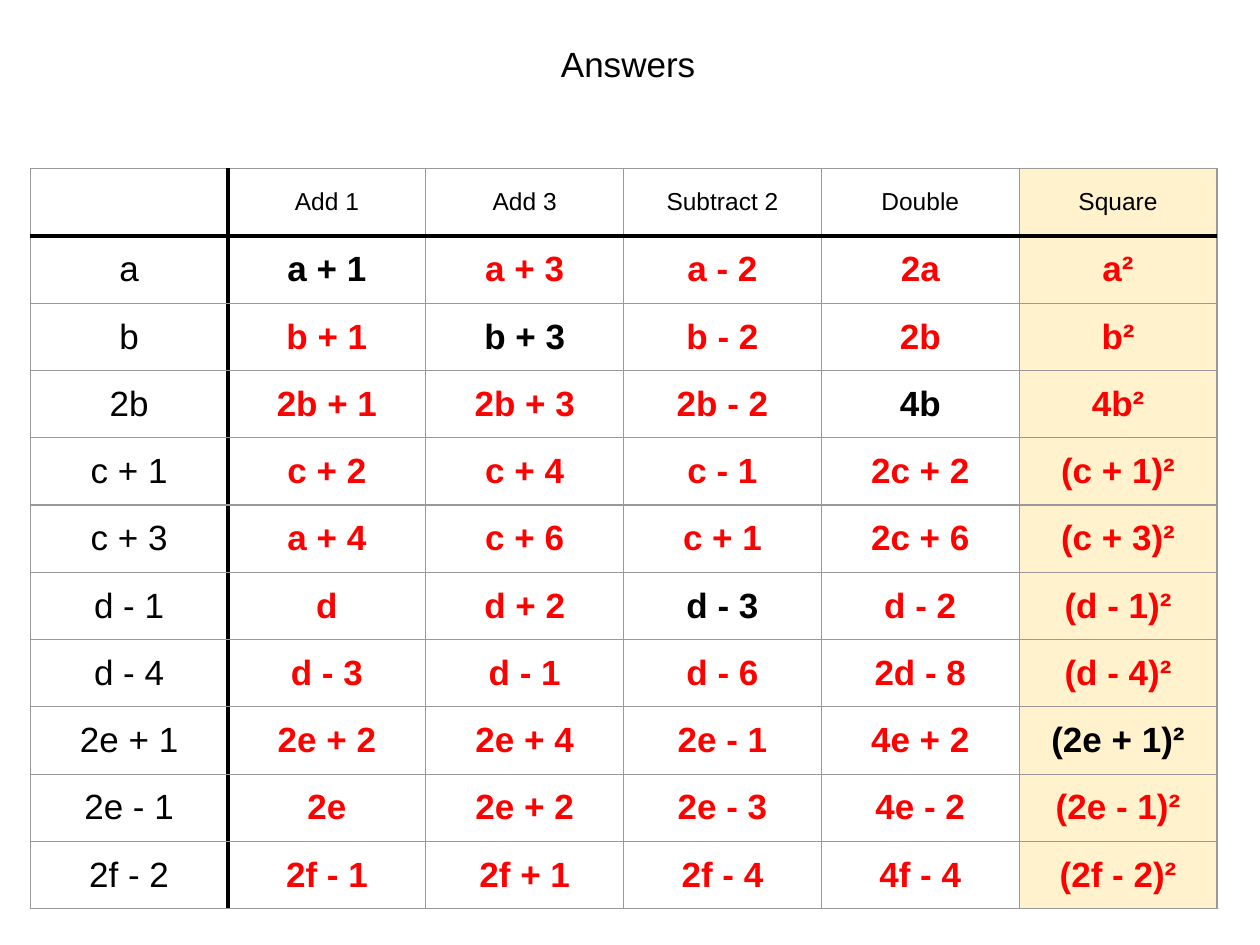
from lxml import etree
from pptx import Presentation
from pptx.dml.color import RGBColor
from pptx.enum import text
from pptx.oxml import ns
from pptx.util import Inches, Pt

BLACK = RGBColor(0x00, 0x00, 0x00)
RED = RGBColor(0xFF, 0x00, 0x00)
GREY = RGBColor(0x99, 0x99, 0x99)
CREAM = RGBColor(0xFF, 0xF2, 0xCC)

ROWS = [
    ["", "Add 1", "Add 3", "Subtract 2", "Double", "Square"],
    ["a", "a + 1", "a + 3", "a - 2", "2a", "a²"],
    ["b", "b + 1", "b + 3", "b - 2", "2b", "b²"],
    ["2b", "2b + 1", "2b + 3", "2b - 2", "4b", "4b²"],
    ["c + 1", "c + 2", "c + 4", "c - 1", "2c + 2", "(c + 1)²"],
    ["c + 3", "a + 4", "c + 6", "c + 1", "2c + 6", "(c + 3)²"],
    ["d - 1", "d", "d + 2", "d - 3", "d - 2", "(d - 1)²"],
    ["d - 4", "d - 3", "d - 1", "d - 6", "2d - 8", "(d - 4)²"],
    ["2e + 1", "2e + 2", "2e + 4", "2e - 1", "4e + 2", "(2e + 1)²"],
    ["2e - 1", "2e", "2e + 2", "2e - 3", "4e - 2", "(2e - 1)²"],
    ["2f - 2", "2f - 1", "2f + 1", "2f - 4", "4f - 4", "(2f - 2)²"],
]
GIVEN = {(1, 1), (2, 2), (3, 4), (6, 3), (8, 5)}  # answers already on the worksheet
SQUARE_COLUMN = 5


class AnswerSlide:
    font = "Arial"
    margin = Inches(0.1)
    large, small = Pt(20), Pt(14)
    thin, thick = (GREY, Pt(0.75)), (BLACK, Pt(3))

    def __init__(self, prs):
        self.s = prs.slides.add_slide(prs.slide_layouts[6])

    def paragraph(self, p, words, size, color=BLACK, bold=False):
        p.text = words
        p.alignment = text.PP_ALIGN.CENTER
        p.font.name, p.font.size, p.font.bold = self.font, size, bold
        p.font.color.rgb = color

    def inset(self, box):
        """Give a text frame or a cell the same margin on all sides."""
        box.margin_left = box.margin_right = self.margin
        box.margin_top = box.margin_bottom = self.margin

    def title(self, words, left, top, width, height):
        tf = self.s.shapes.add_textbox(left, top, width, height).text_frame
        tf.word_wrap = True
        self.inset(tf)
        self.paragraph(tf.paragraphs[0], words, self.large)

    def border(self, cell, side, color, width):
        tcPr = cell._tc.get_or_add_tcPr()
        ln = etree.SubElement(tcPr, ns.qn(f"a:ln{side}"), w=str(width))
        fill = etree.SubElement(ln, ns.qn("a:solidFill"))
        etree.SubElement(fill, ns.qn("a:srgbClr"), val=str(color))

    def cell(self, cell, words, row, col):
        heavy = {"L": col == 1, "R": col == 0, "T": row == 1, "B": row == 0}
        for side, is_heavy in heavy.items():
            self.border(cell, side, *(self.thick if is_heavy else self.thin))
        if col == SQUARE_COLUMN:
            cell.fill.solid()
            cell.fill.fore_color.rgb = CREAM
        else:
            cell.fill.background()
        self.inset(cell)
        cell.vertical_anchor = text.MSO_ANCHOR.MIDDLE
        is_answer = row > 0 and col > 0
        color = RED if is_answer and (row, col) not in GIVEN else BLACK
        size = self.large if row else self.small
        self.paragraph(cell.text_frame.paragraphs[0], words, size, color, is_answer)

    def table(self, rows, left, top, width, height):
        table = self.s.shapes.add_table(
            len(rows), len(rows[0]), left, top, width, height).table
        table.first_row = table.horz_banding = False
        for r, row in enumerate(rows):
            for c, words in enumerate(row):
                self.cell(table.cell(r, c), words, r, c)


def main():
    prs = Presentation()
    prs.slide_width, prs.slide_height = Inches(10), Inches(7.5)
    slide = AnswerSlide(prs)
    slide.title("Answers", Inches(0.24), Inches(0.24), Inches(9.49), Inches(0.85))
    slide.table(ROWS, Inches(0.24), Inches(1.34), Inches(9.42), Inches(5.86))
    prs.save("out.pptx")


if __name__ == "__main__":
    main()
